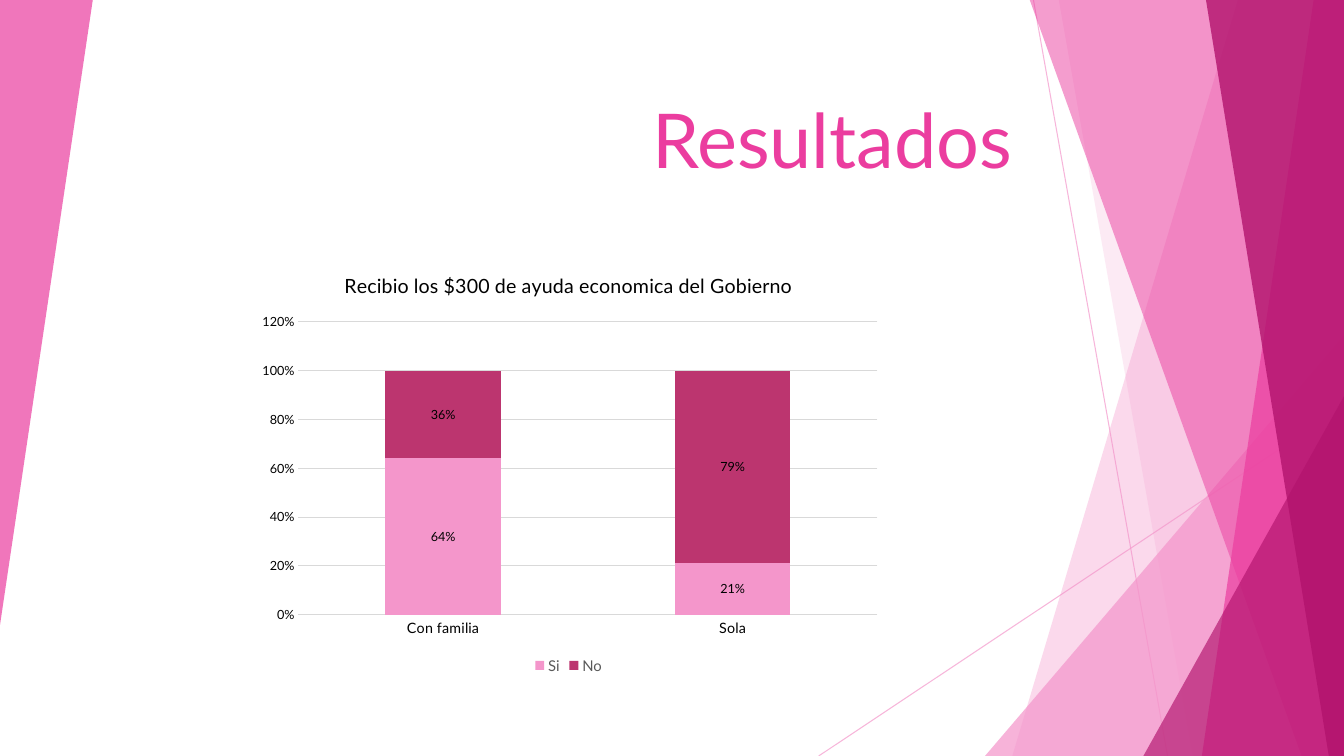
from typing import NamedTuple

from lxml import etree
from pptx import Presentation
from pptx.chart.data import CategoryChartData
from pptx.dml.color import RGBColor
from pptx.enum.chart import XL_CHART_TYPE, XL_LABEL_POSITION, XL_LEGEND_POSITION, XL_TICK_MARK
from pptx.enum.shapes import MSO_CONNECTOR, MSO_SHAPE
from pptx.enum.text import MSO_ANCHOR, PP_ALIGN
from pptx.oxml import parse_xml
from pptx.oxml.ns import nsdecls, qn
from pptx.util import Inches, Pt

FONT = "Lato"
BLACK = RGBColor(0x00, 0x00, 0x00)
GRAY = RGBColor(0x59, 0x59, 0x59)
GRID = RGBColor(0xD9, 0xD9, 0xD9)
LIGHT_PINK = RGBColor(0xF4, 0x96, 0xCB)
PINK = RGBColor(0xEB, 0x3D, 0x9F)
MAGENTA = RGBColor(0xB2, 0x13, 0x6D)
BERRY = RGBColor(0xBC, 0x35, 0x6F)

STRAIGHT = MSO_CONNECTOR.STRAIGHT
TRIANGLE = MSO_SHAPE.ISOSCELES_TRIANGLE
NO_TICK = XL_TICK_MARK.NONE
WIDTH, HEIGHT = 13.33, 7.5
TOP = -0.01


class Ray(NamedTuple):
    x1: float
    y1: float
    x2: float
    y2: float


class Band(NamedTuple):
    """A slanted left edge, filled out to the right side of the slide."""
    top_x: float
    bottom_x: float
    color: RGBColor
    alpha: int


class Corner(NamedTuple):
    """A right-angled triangle, its apex over its right side."""
    left: float
    top: float
    width: float
    height: float
    color: RGBColor
    alpha: int
    rotation: int = 0


RAYS = [Ray(10.25, 0, 11.58, HEIGHT), Ray(WIDTH, 4.03, 8.12, HEIGHT)]
FACETS = [
    Band(12.28, 10.04, LIGHT_PINK, 36),
    Band(10.5, 11.83, LIGHT_PINK, 20),
    Corner(9.77, 3.33, 3.56, 4.17, LIGHT_PINK, 72),
    Band(10.21, 12.91, PINK, 50),
    Band(13.03, 11.92, PINK, 70),
    Band(11.96, 13.18, MAGENTA, 80),
    Corner(11.34, 3.93, 1.99, 3.57, MAGENTA, 66),
    Corner(0, 0, 0.92, 6.2, PINK, 70, 180),
]


def set_alpha(shape, percent: int) -> None:
    for color in shape._element.spPr.iter(qn("a:srgbClr")):
        etree.SubElement(color, qn("a:alpha"), val=str(percent * 1000))


def add_ray(s, ray: Ray) -> None:
    line = s.shapes.add_connector(STRAIGHT, *(Inches(v) for v in ray))
    line.line.color.rgb = LIGHT_PINK
    line.line.width = Pt(0.75)
    set_alpha(line, 70)
    etree.SubElement(line._element.spPr, qn("a:effectLst"))


def add_facet(s, facet: Band | Corner) -> None:
    if isinstance(facet, Band):
        builder = s.shapes.build_freeform(Inches(facet.top_x), Inches(TOP))
        edge = [(WIDTH, TOP), (WIDTH, HEIGHT), (facet.bottom_x, HEIGHT)]
        builder.add_line_segments([(Inches(x), Inches(y)) for x, y in edge], close=True)
        sp = builder.convert_to_shape()
    else:
        sp = s.shapes.add_shape(TRIANGLE, *(Inches(v) for v in facet[:4]))
        sp.adjustments[0] = 1
        sp.rotation = facet.rotation
    sp.shadow.inherit = False
    sp.line.fill.background()
    sp.fill.solid()
    sp.fill.fore_color.rgb = facet.color
    set_alpha(sp, facet.alpha)


def style_font(font, size: float, color: RGBColor = BLACK) -> None:
    font.name = FONT
    font.size = Pt(size)
    font.bold = False
    font.color.rgb = color


def add_title(s) -> None:
    box = s.shapes.add_textbox(Inches(1.65), Inches(0.07), Inches(8.49), Inches(1.8))
    tf = box.text_frame
    tf.word_wrap = True
    tf.vertical_anchor = MSO_ANCHOR.BOTTOM
    p = tf.paragraphs[0]
    p.text = "Resultados"
    p.alignment = PP_ALIGN.RIGHT
    style_font(p.font, 54, PINK)


def place_plot(chart, x: float, y: float, w: float, h: float) -> None:
    """Fix the inner plot area, in fractions of the chart."""
    plot_area = chart._chartSpace.chart.plotArea
    for old in plot_area.findall(qn("c:layout")):
        plot_area.remove(old)
    plot_area.insert(0, parse_xml(
        f'<c:layout {nsdecls("c")}><c:manualLayout><c:layoutTarget val="inner"/>'
        '<c:xMode val="edge"/><c:yMode val="edge"/>'
        f'<c:x val="{x}"/><c:y val="{y}"/><c:w val="{w}"/><c:h val="{h}"/>'
        '</c:manualLayout></c:layout>'))


def add_aid_chart(s) -> None:
    data = CategoryChartData(number_format="0%")
    data.categories = ["Con familia", "Sola"]
    data.add_series("Si", [0.64, 0.21])
    data.add_series("No", [0.36, 0.79])
    chart = s.shapes.add_chart(XL_CHART_TYPE.COLUMN_STACKED, Inches(2.45), Inches(2.52),
                               Inches(6.38), Inches(4.21), data).chart
    style_font(chart.font, 10)

    chart.has_title = True
    p = chart.chart_title.text_frame.paragraphs[0]
    p.text = "Recibio los $300 de ayuda economica del Gobierno"
    style_font(p.font, 14)
    chart.chart_title.include_in_layout = False

    chart.has_legend = True
    chart.legend.position = XL_LEGEND_POSITION.BOTTOM
    chart.legend.include_in_layout = False
    style_font(chart.legend.font, 10.6, GRAY)

    for axis, size in ((chart.category_axis, 10.2), (chart.value_axis, 9)):
        axis.major_tick_mark = axis.minor_tick_mark = NO_TICK
        style_font(axis.tick_labels.font, size)
    values = chart.value_axis
    values.minimum_scale, values.maximum_scale, values.major_unit = 0, 1.2, 0.2
    values.tick_labels.number_format = "0%"
    values.tick_labels.number_format_is_linked = False
    values.format.line.fill.background()
    for line in (chart.category_axis.format.line, values.major_gridlines.format.line):
        line.color.rgb = GRID
        line.width = Pt(0.75)

    plot = chart.plots[0]
    plot.gap_width, plot.overlap = 150, 100
    plot.vary_by_categories = False
    for series, color in zip(plot.series, (LIGHT_PINK, BERRY)):
        series.format.fill.solid()
        series.format.fill.fore_color.rgb = color
        labels = series.data_labels
        labels.show_value = True
        labels.number_format = "0%"
        labels.number_format_is_linked = False
        labels.position = XL_LABEL_POSITION.CENTER
        style_font(labels.font, 9)
    place_plot(chart, 0.08, 0.16, 0.9, 0.69)


def main() -> None:
    prs = Presentation()
    prs.slide_width, prs.slide_height = Inches(WIDTH), Inches(HEIGHT)
    s = prs.slides.add_slide(prs.slide_layouts[6])
    for ray in RAYS:
        add_ray(s, ray)
    for facet in FACETS:
        add_facet(s, facet)
    add_title(s)
    add_aid_chart(s)
    prs.save("out.pptx")


if __name__ == "__main__":
    main()
